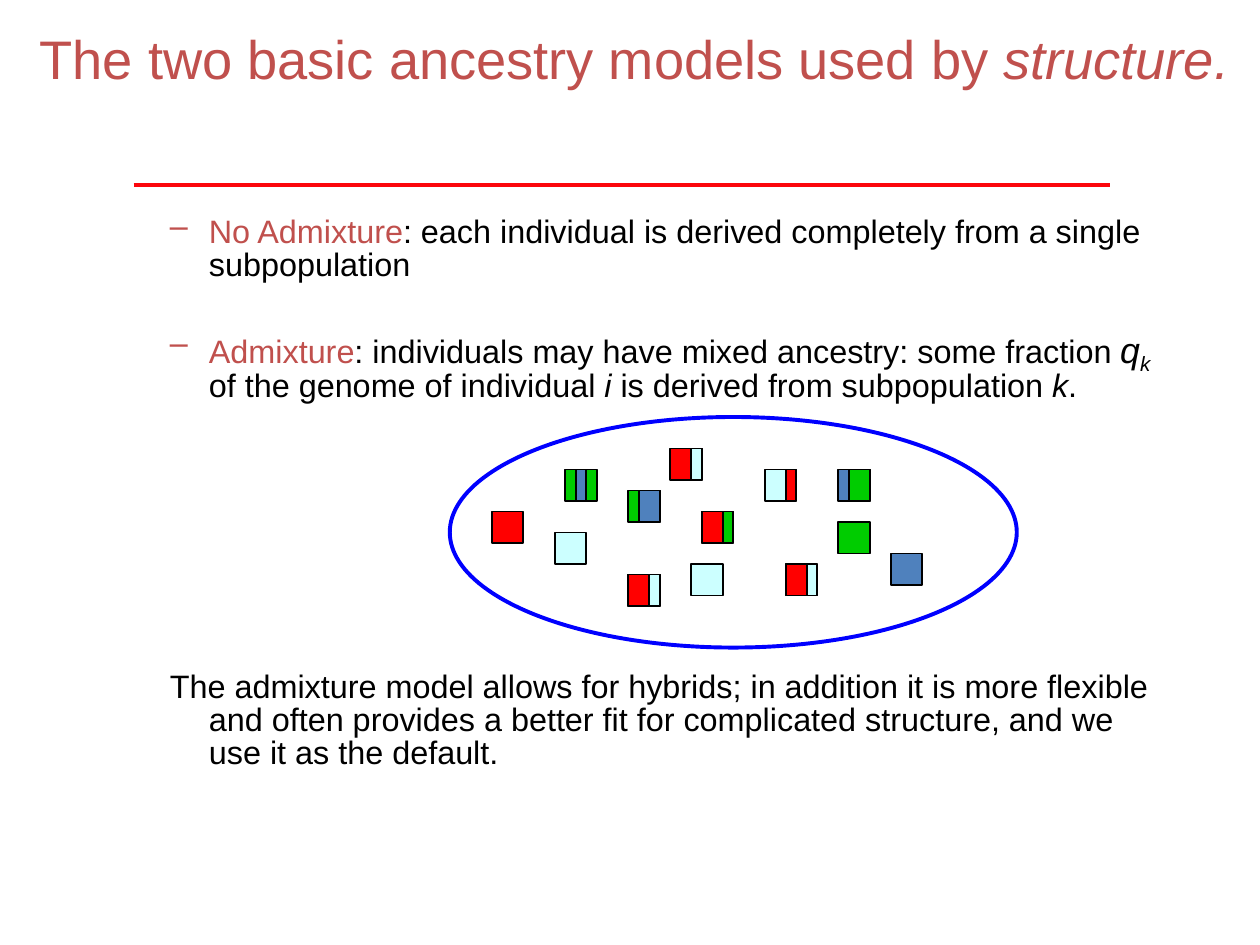
from lxml import etree
from pptx import Presentation
from pptx.dml.color import RGBColor
from pptx.enum import shapes, text
from pptx.oxml.ns import qn
from pptx.util import Inches, Pt

BRICK = RGBColor(0xC0, 0x50, 0x4D)
BLACK = RGBColor(0, 0, 0)
RULE_RED = RGBColor(0xFC, 0x06, 0x0C)
OUTLINE_BLUE = RGBColor(0, 0, 0xFF)
RED = RGBColor(0xFF, 0, 0)
GREEN = RGBColor(0, 0xCC, 0)
BLUE = RGBColor(0x4F, 0x81, 0xBD)
CYAN = RGBColor(0xCC, 0xFF, 0xFF)

FONT = "Arial"
BODY_SIZE = 18.5
UNIT = 1 / 12  # grid step of the population, in inches
SIDE = 3       # side of an individual, in grid steps

# Column and row in grid steps, base colour, then ancestry stripes
# as (colour, first step, width in steps).
INDIVIDUALS = [
    (10, 11, CYAN, []),
    (11, 5, GREEN, [(BLUE, 1, 1)]),
    (17, 7, GREEN, [(BLUE, 1, 2)]),
    (24, 9, BLUE, [(GREEN, 2, 1), (RED, 0, 2)]),
    (32, 14, BLUE, [(CYAN, 2, 1), (RED, 0, 2)]),
    (30, 5, CYAN, [(RED, 2, 1)]),
    (23, 14, CYAN, []),
    (37, 10, GREEN, []),
    (42, 13, BLUE, []),
    (37, 5, BLUE, [(GREEN, 1, 2)]),
    (21, 3, RED, [(CYAN, 2, 1)]),
    (17, 15, BLUE, [(CYAN, 2, 1), (RED, 0, 2)]),
    (4, 9, RED, []),
]


def add_run(paragraph, content, size=BODY_SIZE, color=BLACK, italic=False, baseline=None):
    run = paragraph.add_run()
    run.text = content
    font = run.font
    font.name, font.size, font.italic = FONT, Pt(size), italic
    font.color.rgb = color
    if baseline is not None:
        run._r.get_or_add_rPr().set("baseline", str(baseline))


def format_paragraph(paragraph, before=0, bullet=None):
    """Set a hanging indent and spacing, with an optional bullet."""
    paragraph.line_spacing = 0.85
    paragraph.space_before = Pt(before)
    properties = paragraph._p.get_or_add_pPr()
    properties.set("marL", str(Inches(0.81)))
    properties.set("indent", str(Inches(-0.31)))
    if bullet:
        etree.SubElement(properties, qn("a:buChar")).set("char", bullet)
    else:
        etree.SubElement(properties, qn("a:buNone"))


def place_title(slide, left, top, width, height):
    title = slide.shapes.title
    title.left, title.top = Inches(left), Inches(top)
    title.width, title.height = Inches(width), Inches(height)
    frame = title.text_frame
    frame.vertical_anchor = text.MSO_ANCHOR.MIDDLE
    paragraph = frame.paragraphs[0]
    paragraph.alignment = text.PP_ALIGN.CENTER
    add_run(paragraph, "The two basic ancestry models used by ", size=31, color=BRICK)
    add_run(paragraph, "structure.", size=31, color=BRICK, italic=True)


def add_rule(slide, left, top, width):
    rule = slide.shapes.add_connector(
        shapes.MSO_CONNECTOR.STRAIGHT,
        Inches(left), Inches(top), Inches(left + width), Inches(top))
    rule.line.color.rgb = RULE_RED
    rule.line.width = Pt(2.25)
    etree.SubElement(rule._element.spPr, qn("a:effectLst"))


def add_body(slide, left, top, width, height):
    box = slide.shapes.add_textbox(Inches(left), Inches(top), Inches(width), Inches(height))
    frame = box.text_frame
    frame.word_wrap = True
    frame.margin_right = Inches(0.05)

    no_admixture = frame.paragraphs[0]
    format_paragraph(no_admixture, bullet="–")
    add_run(no_admixture, "No Admixture", color=BRICK)
    add_run(no_admixture, ": each individual is derived completely from a single subpopulation")

    admixture = frame.add_paragraph()
    format_paragraph(admixture, before=27, bullet="–")
    add_run(admixture, "Admixture", color=BRICK)
    add_run(admixture, ": individuals may have mixed ancestry: some fraction ")
    add_run(admixture, "q", size=20.4, italic=True)
    add_run(admixture, "k", size=20.4, italic=True, baseline=-25000)
    add_run(admixture, " of the genome of individual ")
    add_run(admixture, "i", italic=True)
    add_run(admixture, " is derived from subpopulation ")
    add_run(admixture, "k", italic=True)
    add_run(admixture, ".")

    conclusion = frame.add_paragraph()
    format_paragraph(conclusion, before=153)
    add_run(conclusion, "The admixture model allows for hybrids; in addition it is more flexible "
                        "and often provides a better fit for complicated structure, and we use "
                        "it as the default.")


def add_outlined(slide, kind, left, top, width, height, line, weight, fill=None):
    shape = slide.shapes.add_shape(
        kind, Inches(left), Inches(top), Inches(width), Inches(height))
    shape.shadow.inherit = False
    shape.line.color.rgb = line
    shape.line.width = Pt(weight)
    if fill is None:
        shape.fill.background()
    else:
        shape.fill.solid()
        shape.fill.fore_color.rgb = fill


def add_population(slide, left, top, width, height):
    """Draw an ellipse of individuals striped by ancestry."""
    add_outlined(slide, shapes.MSO_SHAPE.OVAL, left, top, width, height, OUTLINE_BLUE, 2.25)
    for column, row, base, stripes in INDIVIDUALS:
        for color, start, steps in [(base, 0, SIDE), *stripes]:
            add_outlined(slide, shapes.MSO_SHAPE.RECTANGLE,
                         left + (column + start) * UNIT, top + row * UNIT,
                         steps * UNIT, SIDE * UNIT, BLACK, 1, fill=color)


def main():
    presentation = Presentation()
    presentation.slide_width, presentation.slide_height = Inches(10), Inches(7.5)
    slide = presentation.slides.add_slide(presentation.slide_layouts[5])
    place_title(slide, 0.17, -0.17, 9.73, 1.25)
    add_body(slide, 0.75, 1.67, 8.5, 4.74)
    add_population(slide, 3.57, 3.31, 4.5, 1.83)
    add_rule(slide, 1.06, 1.47, 7.75)
    presentation.save("out.pptx")


if __name__ == "__main__":
    main()
